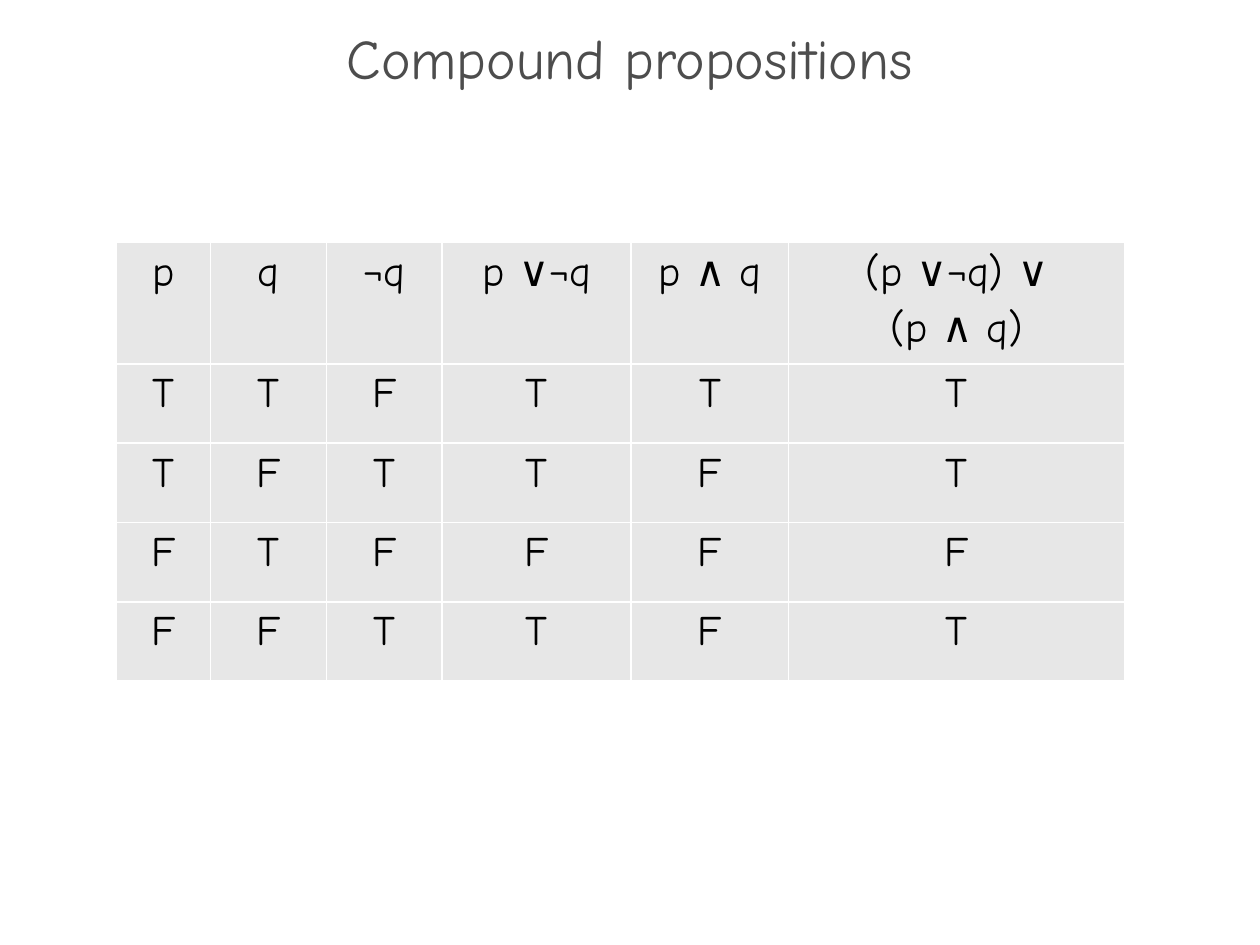
from itertools import product

from lxml.etree import SubElement
from pptx import Presentation
from pptx.dml.color import RGBColor
from pptx.enum.text import MSO_ANCHOR, PP_ALIGN
from pptx.oxml.ns import qn
from pptx.util import Inches, Pt

FONT = "Comic Neue"
COLORS = {"title": "4D4D4D", "text": "000000", "cell": "E7E7E7", "border": "FFFFFF"}
COLUMNS = [0.75, 0.92, 0.92, 1.5, 1.25, 2.67]
ROWS = [0.67] + [0.63] * 4
HEADINGS = ["p", "q", "¬q", "p ∨¬q", "p ∧ q", "(p ∨¬q) ∨\n(p ∧ q)"]


def format_text(para, size, color):
    para.alignment = PP_ALIGN.CENTER
    for span in para.runs:
        span.font.name = FONT
        span.font.size = Pt(size)
        span.font.color.rgb = RGBColor.from_string(COLORS[color])


def add_borders(cell):
    properties = cell._tc.get_or_add_tcPr()
    for side in ("a:lnL", "a:lnR", "a:lnT", "a:lnB"):
        line = SubElement(properties, qn(side), w=str(Pt(1)))
        fill = SubElement(line, qn("a:solidFill"))
        SubElement(fill, qn("a:srgbClr"), val=COLORS["border"])


deck = Presentation()
deck.slide_width, deck.slide_height = Inches(10), Inches(7.5)
page = deck.slides.add_slide(deck.slide_layouts[6])

# Title
title = page.shapes.add_textbox(0, Inches(0.27), deck.slide_width, Inches(0.5))
title.text_frame.word_wrap = True
title.text_frame.vertical_anchor = MSO_ANCHOR.MIDDLE
title.text_frame.text = "Compound propositions"
title.text_frame.paragraphs[0].line_spacing = 0.7
format_text(title.text_frame.paragraphs[0], 32, "title")

# Truth table: every combination of p and q, with the compounds worked out
contents = [HEADINGS]
for p, q in product((True, False), repeat=2):
    values = [p, q, not q, p or not q, p and q, (p or not q) or (p and q)]
    contents.append(["T" if value else "F" for value in values])

frame = page.shapes.add_table(
    len(ROWS), len(COLUMNS), Inches(0.92), Inches(1.92),
    Inches(sum(COLUMNS)), Inches(sum(ROWS)),
)
table = frame.table
for column, width in zip(table.columns, COLUMNS):
    column.width = Inches(width)
for row, height, texts in zip(table.rows, ROWS, contents):
    row.height = Inches(height)
    for cell, text in zip(row.cells, texts):
        cell.text_frame.text = text
        for para in cell.text_frame.paragraphs:
            para.space_before = Pt(4.8)
            format_text(para, 24, "text")
        add_borders(cell)
        cell.fill.solid()
        cell.fill.fore_color.rgb = RGBColor.from_string(COLORS["cell"])

deck.save("out.pptx")
